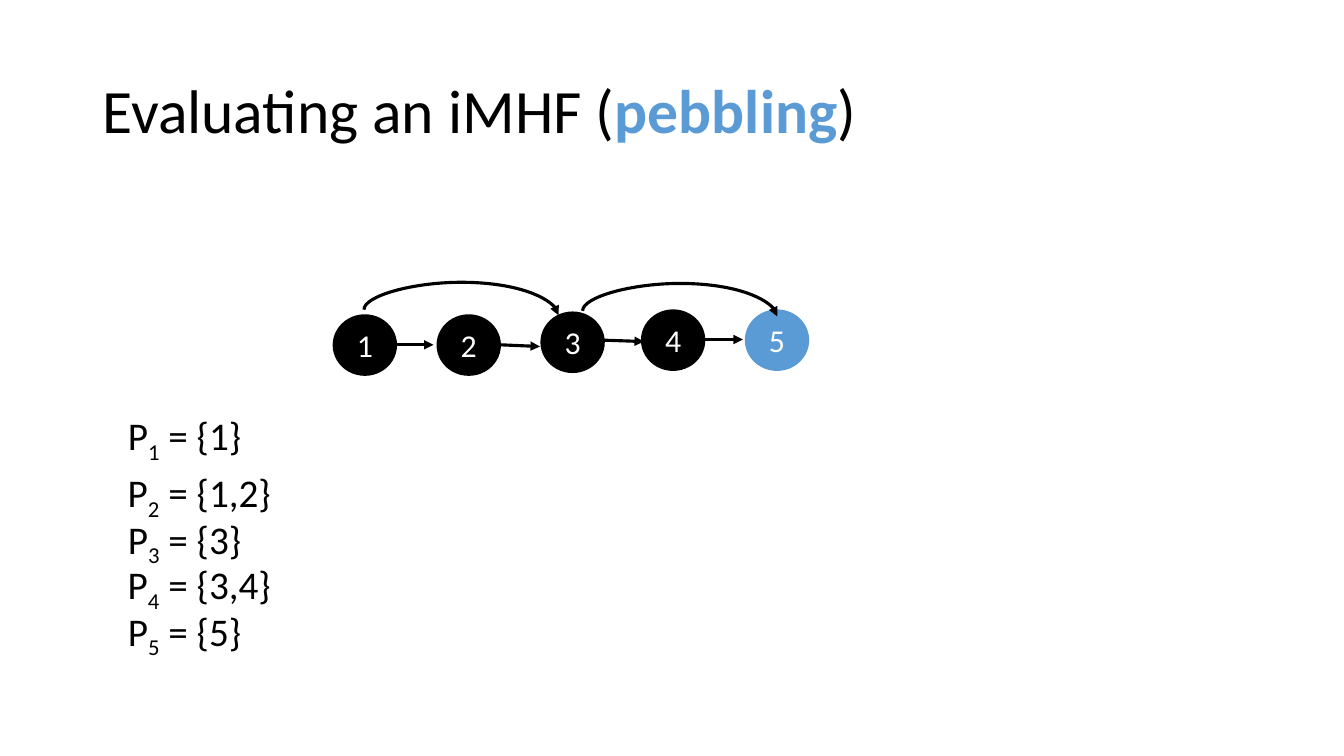
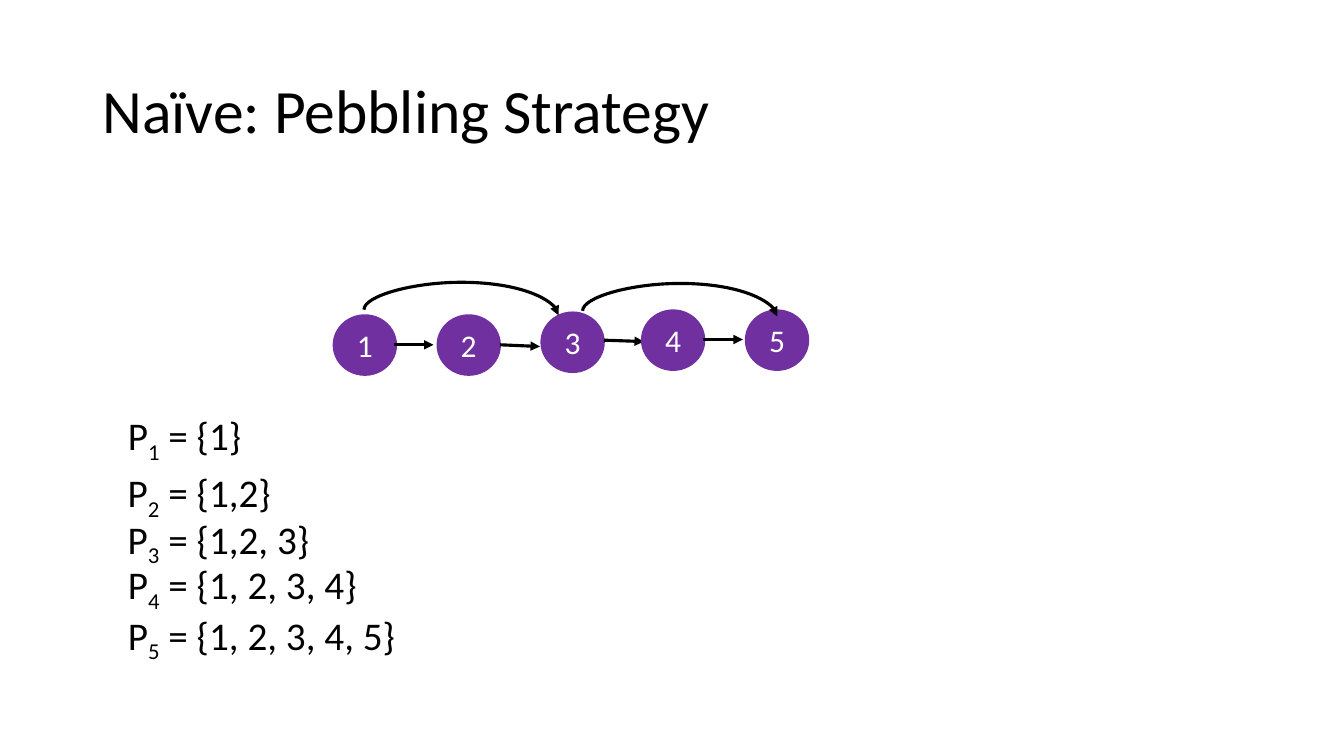
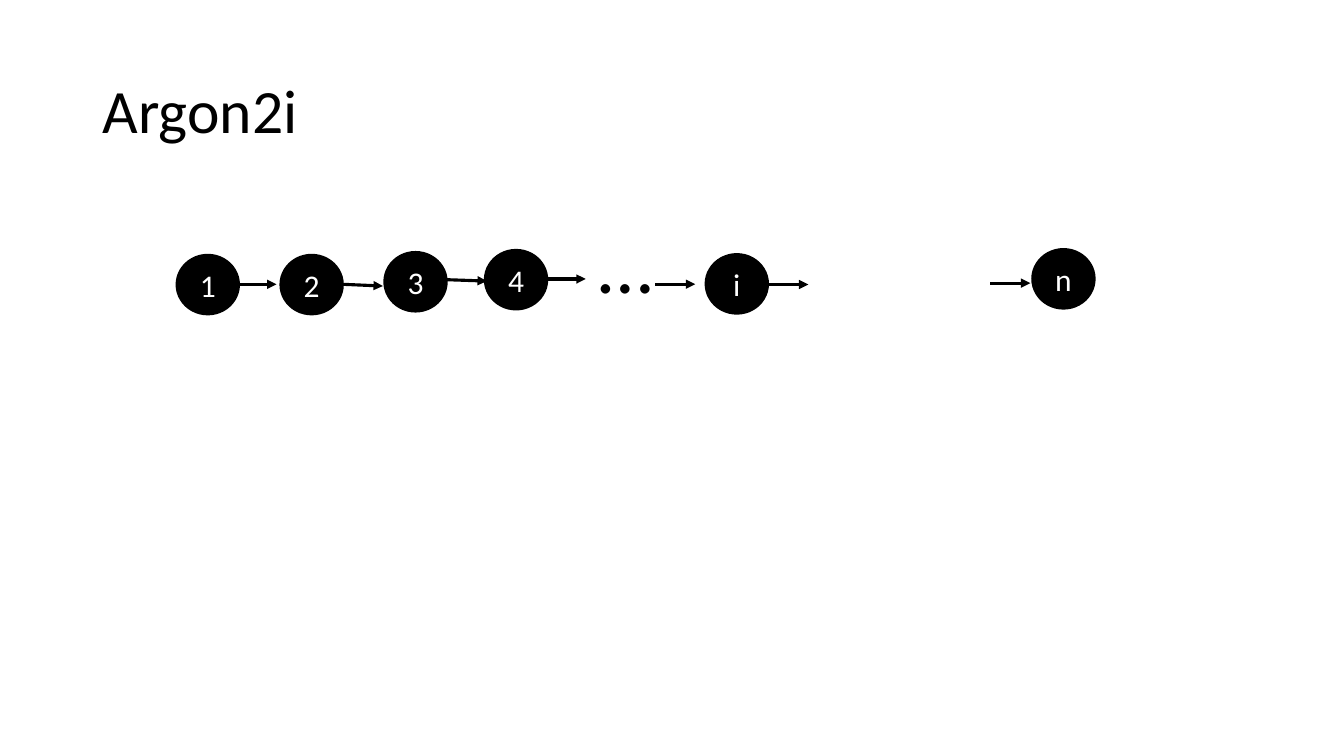
from lxml.etree import SubElement
from pptx import Presentation
from pptx.dml.color import RGBColor
from pptx.enum.shapes import MSO_CONNECTOR, MSO_SHAPE
from pptx.enum.text import MSO_ANCHOR, MSO_AUTO_SIZE, PP_ALIGN
from pptx.oxml.ns import qn
from pptx.util import Pt

# Shared look
BLACK = RGBColor(0x00, 0x00, 0x00)
WHITE = RGBColor(0xFF, 0xFF, 0xFF)
BLUE = RGBColor(0x5B, 0x9B, 0xD5)
PURPLE = RGBColor(0x70, 0x30, 0xA0)
FONT = "Calibri"
TITLE_ONLY = 5

# Chain geometry, relative to the left of node 1 and the top of node 4
NODE_WIDTH, NODE_HEIGHT = 46, 44
NODE_OFFSETS = [(0, 3.5), (74.2, 3.5), (148.4, 1.5), (220.2, 0), (294.4, 0)]
ARROW_OFFSETS = [(43.5, 25.3, 25.3), (119.5, 25.3, 26.5),
                 (193.8, 22, 23), (264.4, 21.5, 21.5)]
ARROW_LENGTH = 28.6
ARC_STARTS = [(260, 221.2), (416.2, 222)]
ARC_SPAN, ARC_DROP, ARC_RISE = 139, 4, 19.6

# Positions of the pebbling steps
STEP_LEFT, STEP_HEIGHT = 84.2, 41
STEP_TOPS = [290.2, 331.2, 364.2, 397]


def add_run(paragraph, text, size=28, color=BLACK, bold=False, baseline=None):
    run = paragraph.add_run()
    run.text = text
    run.font.name = FONT
    run.font.size = Pt(size)
    run.font.bold = bold
    run.font.color.rgb = color
    if baseline is not None:
        run.font._element.set("baseline", str(baseline * 1000))


def add_titled_slide(presentation, *parts):
    """Each part is a text and its run format."""
    slide = presentation.slides.add_slide(presentation.slide_layouts[TITLE_ONLY])
    title = slide.shapes.title
    title.left, title.top, title.width, title.height = (
        Pt(66), Pt(28.8), Pt(828), Pt(104.4))
    title.text_frame.vertical_anchor = MSO_ANCHOR.MIDDLE
    paragraph = title.text_frame.paragraphs[0]
    paragraph.alignment = PP_ALIGN.LEFT
    paragraph.line_spacing = 0.9
    for text, run_format in parts:
        add_run(paragraph, text, size=44, **run_format)
    return slide


def add_text_box(slide, left, top, width, height):
    """Return the first paragraph of a new one-line text box."""
    box = slide.shapes.add_textbox(Pt(left), Pt(top), Pt(width), Pt(height))
    box.text_frame.word_wrap = False
    box.text_frame.auto_size = MSO_AUTO_SIZE.SHAPE_TO_FIT_TEXT
    return box.text_frame.paragraphs[0]


def add_node(slide, label, left, top, fill=BLACK, size=22.5):
    node = slide.shapes.add_shape(
        MSO_SHAPE.OVAL, Pt(left), Pt(top), Pt(NODE_WIDTH), Pt(NODE_HEIGHT))
    node.shadow.inherit = False
    node.fill.solid()
    node.fill.fore_color.rgb = fill
    node.line.fill.background()
    node.text_frame.word_wrap = False
    node.text_frame.vertical_anchor = MSO_ANCHOR.MIDDLE
    paragraph = node.text_frame.paragraphs[0]
    paragraph.alignment = PP_ALIGN.CENTER
    add_run(paragraph, label, size=size, color=WHITE)


def add_connector(slide, kind, start_x, start_y, end_x, end_y):
    connector = slide.shapes.add_connector(
        kind, Pt(start_x), Pt(start_y), Pt(end_x), Pt(end_y))
    connector.line.color.rgb = BLACK
    connector.line.width = Pt(2.25)
    SubElement(connector.line._get_or_add_ln(), qn("a:tailEnd"), type="triangle")
    SubElement(connector._element.spPr, qn("a:effectLst"))
    return connector


def add_arrow(slide, left, start_y, end_y):
    add_connector(slide, MSO_CONNECTOR.STRAIGHT,
                  left, start_y, left + ARROW_LENGTH, end_y)


def add_arc(slide, left, top):
    """Add a curved arrow that rises from its start and drops onto its end."""
    center_x, center_y = left + ARC_SPAN / 2, top + ARC_DROP / 2
    # The frame is a quarter turn off, so span and drop change places
    arc = add_connector(slide, MSO_CONNECTOR.CURVE,
                        center_x + ARC_DROP / 2, center_y - ARC_SPAN / 2,
                        center_x - ARC_DROP / 2, center_y + ARC_SPAN / 2)
    properties = arc._element.spPr
    properties.find(qn("a:xfrm")).set("rot", str(270 * 60000))
    geometry = properties.find(qn("a:prstGeom"))
    adjustments = geometry.find(qn("a:avLst"))
    if adjustments is None:
        adjustments = SubElement(geometry, qn("a:avLst"))
    bend = round(-ARC_RISE / ARC_DROP * 100000)
    SubElement(adjustments, qn("a:gd"), name="adj1", fmla=f"val {bend}")


def add_chain(slide, left, top, fills, size=22.5):
    """Add numbered nodes, each followed by its arrow to the next."""
    for index, fill in enumerate(fills):
        node_x, node_y = NODE_OFFSETS[index]
        add_node(slide, str(index + 1), left + node_x, top + node_y, fill, size)
        if index < len(ARROW_OFFSETS):
            arrow_x, start_y, end_y = ARROW_OFFSETS[index]
            add_arrow(slide, left + arrow_x, top + start_y, top + end_y)


def add_pebbling(slide, fills, size, steps, last_top):
    """Add the five-node graph and the pebble set of each step."""
    add_chain(slide, 237.6, 221, fills, size)
    for left, top in ARC_STARTS:
        add_arc(slide, left, top)
    tops = STEP_TOPS + [last_top]
    for number, ((pebbles, width), top) in enumerate(zip(steps, tops), start=1):
        paragraph = add_text_box(slide, STEP_LEFT, top, width, STEP_HEIGHT)
        add_run(paragraph, "P")
        add_run(paragraph, str(number), baseline=-25)
        add_run(paragraph, f" = {{{pebbles}}}")


def main():
    presentation = Presentation()
    presentation.slide_width, presentation.slide_height = Pt(960), Pt(540)

    # Evaluating by pebbling
    slide = add_titled_slide(
        presentation, ("Evaluating an iMHF (", {}),
        ("pebbling", {"color": BLUE, "bold": True}), (")", {}))
    add_pebbling(slide, [BLACK] * 4 + [BLUE], 22.7,
                 [("1", 98), ("1,2", 119.5), ("3", 98), ("3,4", 119.5), ("5", 98)],
                 last_top=430)

    # Naïve strategy
    slide = add_titled_slide(presentation, ("Naïve: Pebbling Strategy", {}))
    add_pebbling(slide, [PURPLE] * 5, 22.5,
                 [("1", 98), ("1,2", 119.5), ("1,2, 3", 147),
                  ("1, 2, 3, 4", 181.5), ("1, 2, 3, 4, 5", 209.5)],
                 last_top=432.8)

    # Argon2i chain
    slide = add_titled_slide(presentation, ("Argon2i", {}))
    add_chain(slide, 125.4, 177.8, [BLACK] * 4)
    add_run(add_text_box(slide, 420.5, 149.8, 54, 75.6), "…", size=56.2)
    add_node(slide, "i", 503.3, 180.8)
    add_node(slide, "n", 736.6, 177.2)
    for left, y in [(468, 203), (548.8, 203.2), (707.4, 202.2)]:
        add_arrow(slide, left, y, y)

    presentation.save("out.pptx")


if __name__ == "__main__":
    main()
